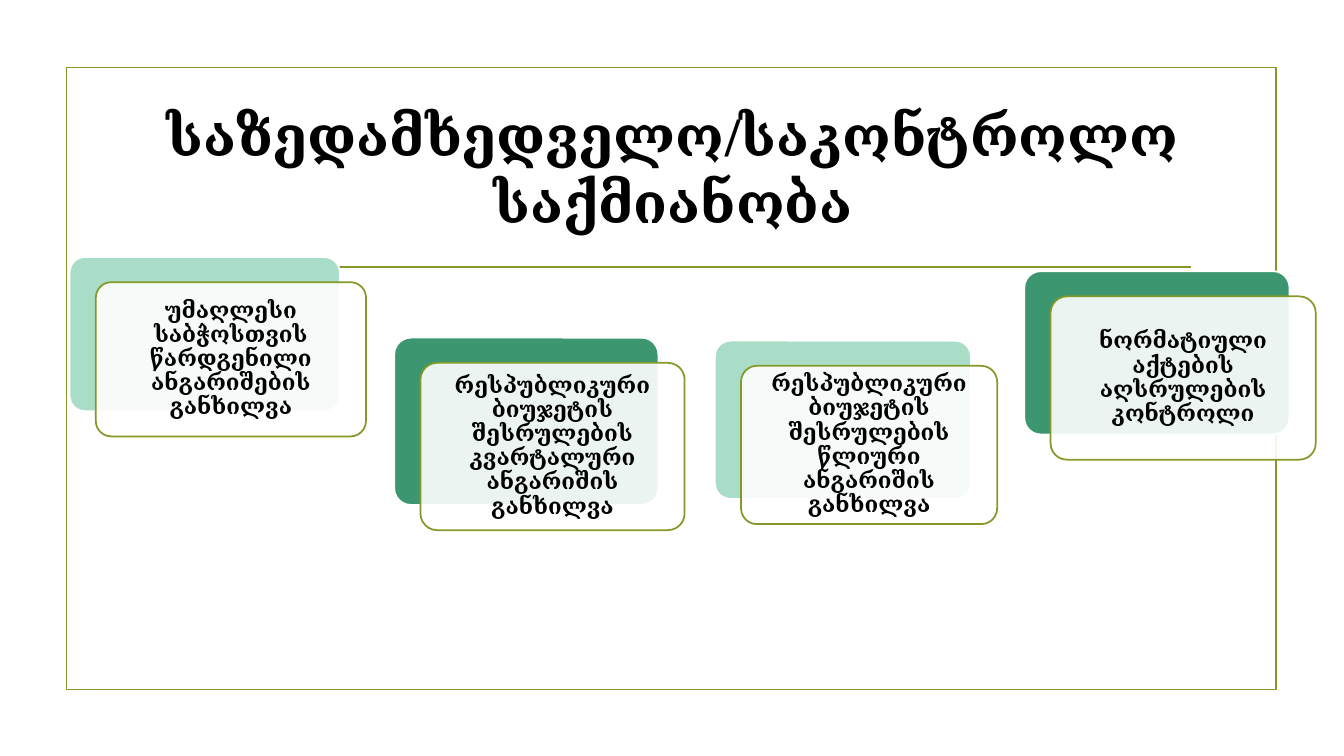
from dataclasses import dataclass

from lxml import etree
from pptx import Presentation
from pptx.dml.color import RGBColor
from pptx.enum.shapes import MSO_CONNECTOR, MSO_SHAPE
from pptx.enum.text import MSO_ANCHOR, MSO_AUTO_SIZE, PP_ALIGN
from pptx.oxml.ns import qn
from pptx.util import Inches, Pt

COLORS = {
    "olive": "83992A",
    "mint": "A9DDC7",
    "green": "3C9770",
    "white": "FFFFFF",
    "black": "000000",
}
FONT = "Times New Roman"
LINE_WIDTH = Pt(1.25)
CARD_OFFSET = (0.26, 0.25)


@dataclass
class Task:
    left: float
    top: float
    width: float
    height: float
    color: str
    text: str


TASKS = [
    Task(0.69, 2.55, 2.68, 1.53, "mint",
         "უმაღლესი საბჭოსთვის წარდგენილი ანგარიშების განხილვა"),
    Task(3.91, 3.35, 2.62, 1.66, "green",
         "რესპუბლიკური ბიუჯეტის შესრულების კვარტალური ანგარიშის განხილვა"),
    Task(7.09, 3.38, 2.54, 1.57, "mint",
         "რესპუბლიკური ბიუჯეტის შესრულების წლიური ანგარიშის განხილვა"),
    Task(10.16, 2.69, 2.63, 1.62, "green",
         "ნორმატიული აქტების აღსრულების კონტროლი"),
]


def rgb(name: str) -> RGBColor:
    return RGBColor.from_string(COLORS[name])


def write_text(shape, text: str, *, size: float, margin_x: float = 0.07,
               margin_y: float = 0.07, spacing: float = 0.9) -> None:
    frame = shape.text_frame
    frame.word_wrap = True
    frame.auto_size = MSO_AUTO_SIZE.NONE
    frame.vertical_anchor = MSO_ANCHOR.MIDDLE
    frame.margin_left = frame.margin_right = Inches(margin_x)
    frame.margin_top = frame.margin_bottom = Inches(margin_y)
    paragraph = frame.paragraphs[0]
    paragraph.alignment = PP_ALIGN.CENTER
    paragraph.line_spacing = spacing
    run = paragraph.add_run()
    run.text = text
    run.font.name = FONT
    run.font.size = Pt(size)
    run.font.bold = True
    run.font.color.rgb = rgb("black")


def add_box(slide, kind, left: float, top: float, width: float, height: float,
            *, line: str, fill: str | None = None, opacity: int = 100):
    box = slide.shapes.add_shape(
        kind, Inches(left), Inches(top), Inches(width), Inches(height))
    box.shadow.inherit = False
    box.line.color.rgb = rgb(line)
    box.line.width = LINE_WIDTH
    if kind == MSO_SHAPE.ROUNDED_RECTANGLE:
        box.adjustments[0] = 0.1
    if fill is None:
        box.fill.background()
        return box
    box.fill.solid()
    box.fill.fore_color.rgb = rgb(fill)
    if opacity < 100:
        color = box.fill._xPr.find(qn("a:solidFill"))[0]
        etree.SubElement(color, qn("a:alpha"), val=str(opacity * 1000))
    return box


def add_task(slide, task: Task) -> None:
    rounded = MSO_SHAPE.ROUNDED_RECTANGLE
    add_box(slide, rounded, task.left, task.top, task.width, task.height,
            line="white", fill=task.color)
    dx, dy = CARD_OFFSET
    card = add_box(slide, rounded, task.left + dx, task.top + dy,
                   task.width, task.height,
                   line="olive", fill="white", opacity=90)
    write_text(card, task.text, size=16)


def add_rule(slide, left: float, right: float, y: float) -> None:
    rule = slide.shapes.add_connector(
        MSO_CONNECTOR.STRAIGHT, Inches(left), Inches(y), Inches(right), Inches(y))
    rule.line.color.rgb = rgb("olive")
    rule.line.width = LINE_WIDTH
    etree.SubElement(rule._element.spPr, qn("a:effectLst"))


def main() -> None:
    deck = Presentation()
    deck.slide_width, deck.slide_height = Inches(13.33), Inches(7.5)
    slide = deck.slides.add_slide(deck.slide_layouts[5])

    # Frame and rule under the title
    add_box(slide, MSO_SHAPE.RECTANGLE, 0.66, 0.67, 12, 6.17, line="olive")
    add_rule(slide, 1.53, 11.81, 2.65)

    # Title
    title = slide.shapes.title
    title.left, title.top = Inches(1.23), Inches(0.66)
    title.width, title.height = Inches(10.89), Inches(2.01)
    write_text(title, "საზედამხედველო/საკონტროლო საქმიანობა", size=39.6,
               margin_x=0.1, margin_y=0.05, spacing=1.0)

    # Oversight tasks
    for task in TASKS:
        add_task(slide, task)

    deck.save("out.pptx")


if __name__ == "__main__":
    main()
